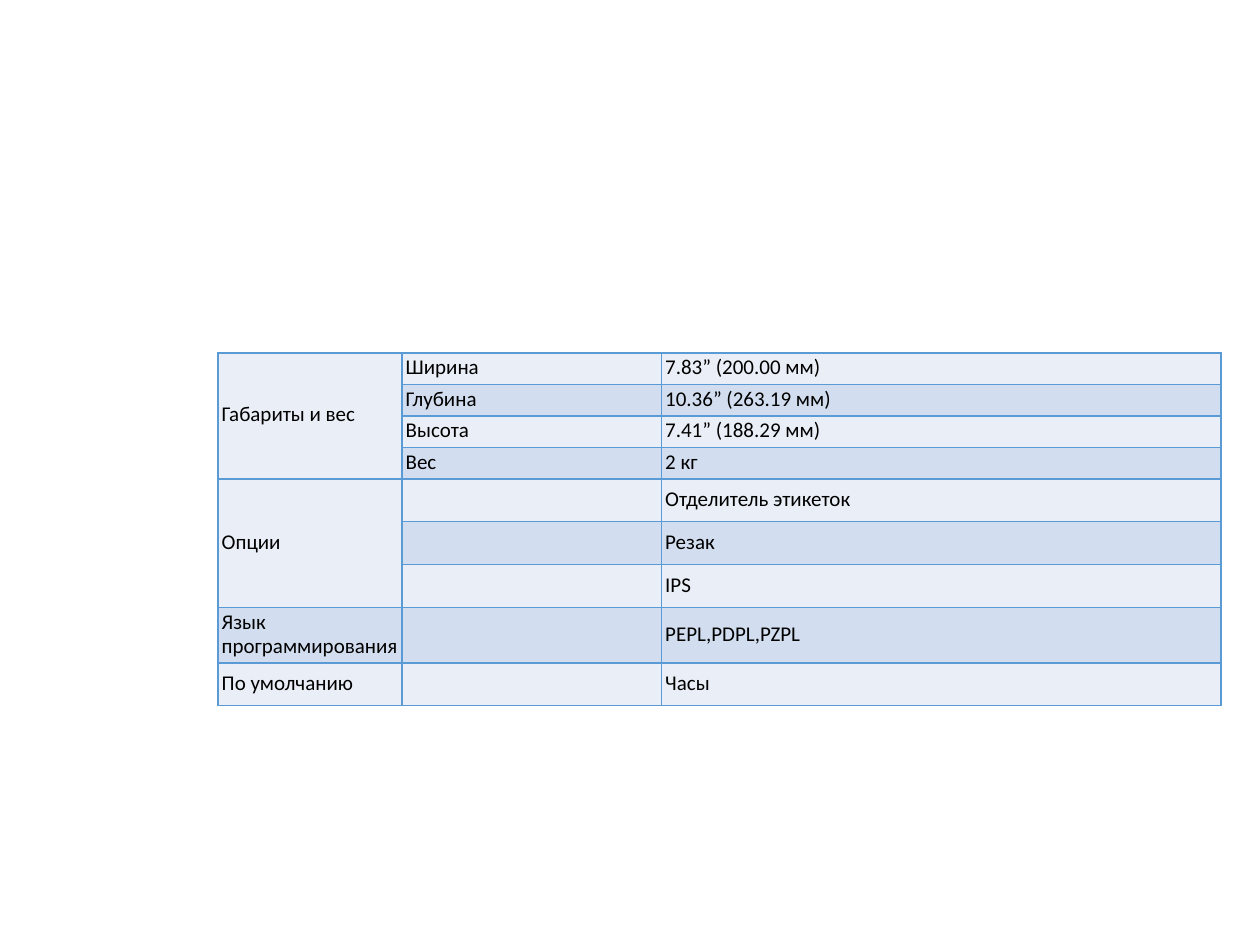
from lxml import etree
from pptx import Presentation
from pptx.dml.color import RGBColor
from pptx.enum.text import MSO_ANCHOR, PP_ALIGN
from pptx.oxml.ns import qn
from pptx.util import Inches, Pt

MIDDLE = MSO_ANCHOR.MIDDLE
LEFT, JUSTIFY = PP_ALIGN.LEFT, PP_ALIGN.JUSTIFY
COLORS = {"light": "EAEFF7", "dark": "D2DEEF", "border": "5B9BD5", "text": "000000"}

COLUMN_WIDTHS = [1.46, 2.06, 4.44]
ROW_HEIGHTS = [0.25] * 7 + [0.44, 0.25]
ROWS = [
    ("Габариты и вес", "Ширина", "7.83” (200.00 мм)"),
    ("", "Глубина", "10.36” (263.19 мм)"),
    ("", "Высота", "7.41” (188.29 мм)"),
    ("", "Вес", "2 кг"),
    ("Опции", "", "Отделитель этикеток"),
    ("", "", "Резак"),
    ("", "", "IPS"),
    ("Язык программирования", "", "PEPL,PDPL,PZPL"),
    ("По умолчанию", "", "Часы"),
]
GROUPS = [(0, 3), (4, 6)]  # first and last row of each merged heading


def write_text(cell, text, size=12, font="Calibri", color="text", align=LEFT):
    cell.vertical_anchor = MIDDLE
    cell.margin_left = cell.margin_right = Inches(0.03)
    cell.margin_top = cell.margin_bottom = Inches(0.03)
    paragraph = cell.text_frame.paragraphs[0]
    paragraph.alignment = align
    paragraph.line_spacing = Pt(13.5)
    run = paragraph.add_run()
    run.text = text
    run.font.size = Pt(size)
    run.font.name = font
    run.font.color.rgb = RGBColor.from_string(COLORS[color])


def add_borders(cell, color="border", width=1):
    properties = cell._tc.get_or_add_tcPr()
    for side in ("a:lnL", "a:lnR", "a:lnT", "a:lnB"):
        line = etree.SubElement(properties, qn(side), w=str(Pt(width)))
        fill = etree.SubElement(line, qn("a:solidFill"))
        etree.SubElement(fill, qn("a:srgbClr"), val=COLORS[color])


presentation = Presentation()
presentation.slide_width = Inches(10)
presentation.slide_height = Inches(7.5)
slide = presentation.slides.add_slide(presentation.slide_layouts[6])

# Specification table
table = slide.shapes.add_table(
    len(ROWS), len(COLUMN_WIDTHS), Inches(1.73), Inches(2.8),
    Inches(sum(COLUMN_WIDTHS)), Inches(sum(ROW_HEIGHTS))
).table
table.first_row = False
for column, width in zip(table.columns, COLUMN_WIDTHS):
    column.width = Inches(width)
for row, height in zip(table.rows, ROW_HEIGHTS):
    row.height = Inches(height)
for first, last in GROUPS:
    table.cell(first, 0).merge(table.cell(last, 0))

# Cells with alternating row fills
for row_index, texts in enumerate(ROWS):
    band = "dark" if row_index % 2 else "light"
    for column_index, text in enumerate(texts):
        cell = table.cell(row_index, column_index)
        write_text(cell, text, align=JUSTIFY if text == "Опции" else LEFT)
        add_borders(cell)
        cell.fill.solid()
        cell.fill.fore_color.rgb = RGBColor.from_string(COLORS[band])

presentation.save("out.pptx")
